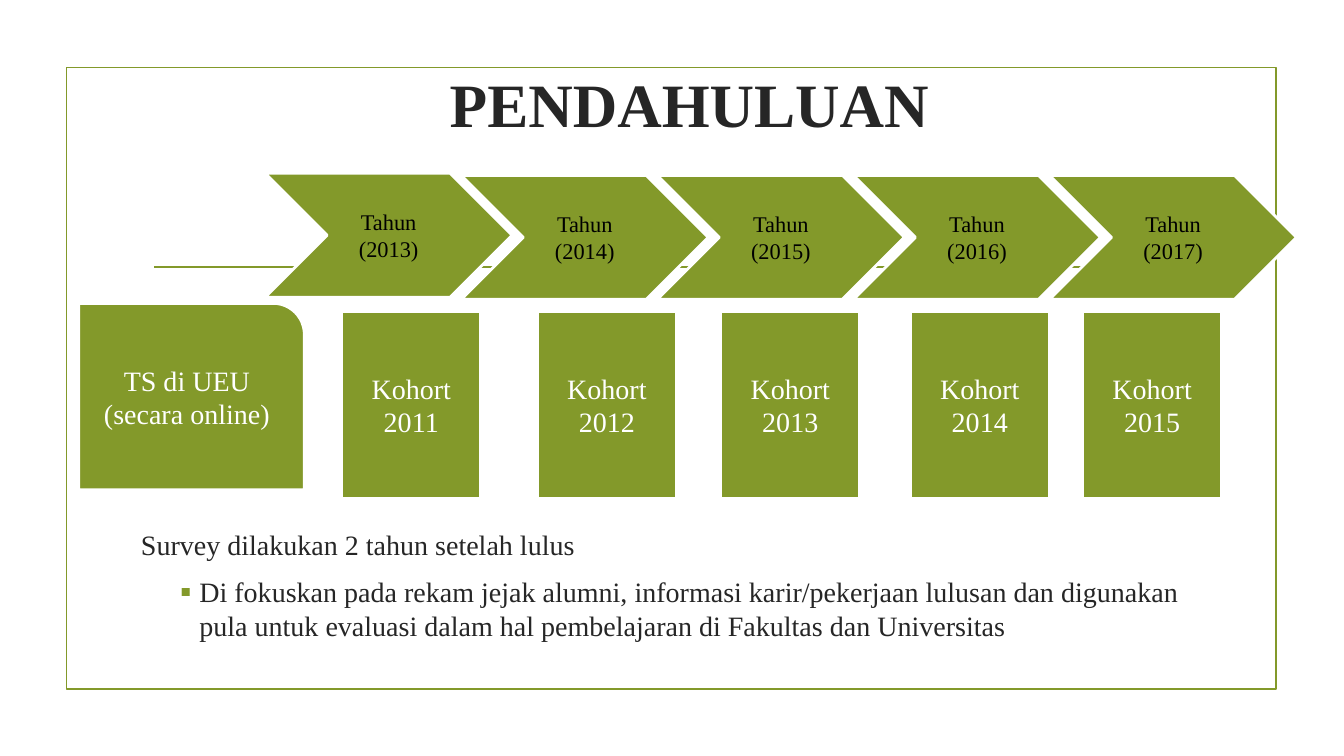
from lxml.etree import SubElement
from pptx import Presentation
from pptx.dml.color import RGBColor
from pptx.enum.shapes import MSO_CONNECTOR as Connector, MSO_SHAPE as Shape
from pptx.enum.text import MSO_ANCHOR as Anchor, PP_ALIGN as Align
from pptx.oxml.ns import qn
from pptx.util import Inches, Pt

COLORS = {"green": "83992A", "white": "FFFFFF", "black": "000000", "ink": "262626"}
FONT = "Times New Roman"


def color(name):
    return RGBColor.from_string(COLORS[name])


class SlideBuilder:
    """Places styled elements; all lengths are percentages of the slide's size."""

    def __init__(self, presentation):
        self.column = presentation.slide_width / 100
        self.row = presentation.slide_height / 100
        self.slide = presentation.slides.add_slide(presentation.slide_layouts[6])

    def grid(self, left, top, width, height):
        return (round(left * self.column), round(top * self.row),
                round(width * self.column), round(height * self.row))

    def set_text(self, paragraph, text, size, ink, align=Align.CENTER, bold=False):
        paragraph.text = text
        paragraph.alignment = align
        font = paragraph.font
        font.name, font.size, font.bold = FONT, Pt(size), bold
        font.color.rgb = color(ink)

    def frame(self, box):
        shape = self.slide.shapes.add_shape(Shape.RECTANGLE, *self.grid(*box))
        shape.shadow.inherit = False
        shape.fill.background()
        shape.line.color.rgb = color("green")
        shape.line.width = Pt(1.25)

    def rule(self, left, right, top):
        start, y, end, _ = self.grid(left, top, right, 0)
        line = self.slide.shapes.add_connector(Connector.STRAIGHT, start, y, end, y)
        line.line.color.rgb = color("green")
        line.line.width = Pt(1.25)
        SubElement(line._element.spPr, qn("a:effectLst"))

    def block(self, kind, box, lines, size=20, ink="white"):
        shape = self.slide.shapes.add_shape(kind, *self.grid(*box))
        shape.shadow.inherit = False
        shape.fill.solid()
        shape.fill.fore_color.rgb = color("green")
        shape.line.color.rgb = color("white")
        shape.line.width = Pt(2)
        text_frame = shape.text_frame
        text_frame.word_wrap = True
        text_frame.vertical_anchor = Anchor.MIDDLE
        for index, text in enumerate(lines):
            paragraph = text_frame.add_paragraph() if index else text_frame.paragraphs[0]
            self.set_text(paragraph, text, size, ink)

    def text_box(self, box, anchor=Anchor.TOP):
        text_frame = self.slide.shapes.add_textbox(*self.grid(*box)).text_frame
        text_frame.word_wrap = True
        text_frame.vertical_anchor = anchor
        return text_frame

    def title(self, box, text):
        paragraph = self.text_box(box, Anchor.MIDDLE).paragraphs[0]
        self.set_text(paragraph, text, 44, "ink", bold=True)

    def body(self, box, lead, point):
        text_frame = self.text_box(box)
        self.set_text(text_frame.paragraphs[0], lead, 20, "ink", Align.LEFT)
        text_frame.paragraphs[0].space_after = Pt(6)
        paragraph = text_frame.add_paragraph()
        self.bullet(paragraph)
        self.set_text(paragraph, point, 20, "ink", Align.LEFT)
        paragraph.space_before = Pt(4)

    def bullet(self, paragraph):
        properties = paragraph._p.get_or_add_pPr()
        properties.set("marL", str(Inches(0.58)))
        properties.set("indent", str(Inches(-0.19)))
        bullet_color = SubElement(properties, qn("a:buClr"))
        SubElement(bullet_color, qn("a:srgbClr"), val=COLORS["green"])
        SubElement(properties, qn("a:buSzPct"), val="115000")
        SubElement(properties, qn("a:buFont"), typeface=FONT)
        SubElement(properties, qn("a:buChar"), char="▪")


def main():
    presentation = Presentation()
    presentation.slide_width, presentation.slide_height = Inches(13.33), Inches(7.5)
    builder = SlideBuilder(presentation)

    builder.frame((4.95, 8.93, 90, 82.27))
    builder.rule(11.48, 88.58, 35.33)
    builder.title((8.18, 4, 86.25, 19.33), "PENDAHULUAN")
    builder.body(
        (9.75, 69.07, 81.25, 19.73),
        "Survey dilakukan 2 tahun setelah lulus",
        "Di fokuskan pada rekam jejak alumni, informasi karir/pekerjaan lulusan dan "
        "digunakan pula untuk evaluasi dalam hal pembelajaran di Fakultas dan Universitas",
    )
    builder.block(Shape.ROUND_1_RECTANGLE, (5.85, 40.13, 16.8, 24.67),
                  ["TS di UEU (secara online)"])

    cohort_lefts = [25.43, 39.98, 53.63, 67.73, 80.55]
    for index, cohort_left in enumerate(cohort_lefts):
        chevron_top = 23.2 if index else 22.93
        builder.block(Shape.CHEVRON, (19.73 + 14.59 * index, chevron_top, 18.38, 16.4),
                      [f"Tahun ({2013 + index})"], 16, "black")
        builder.block(Shape.RECTANGLE, (cohort_left, 41.2, 10.35, 24.67),
                      ["Kohort", str(2011 + index)])

    presentation.save("out.pptx")


if __name__ == "__main__":
    main()
